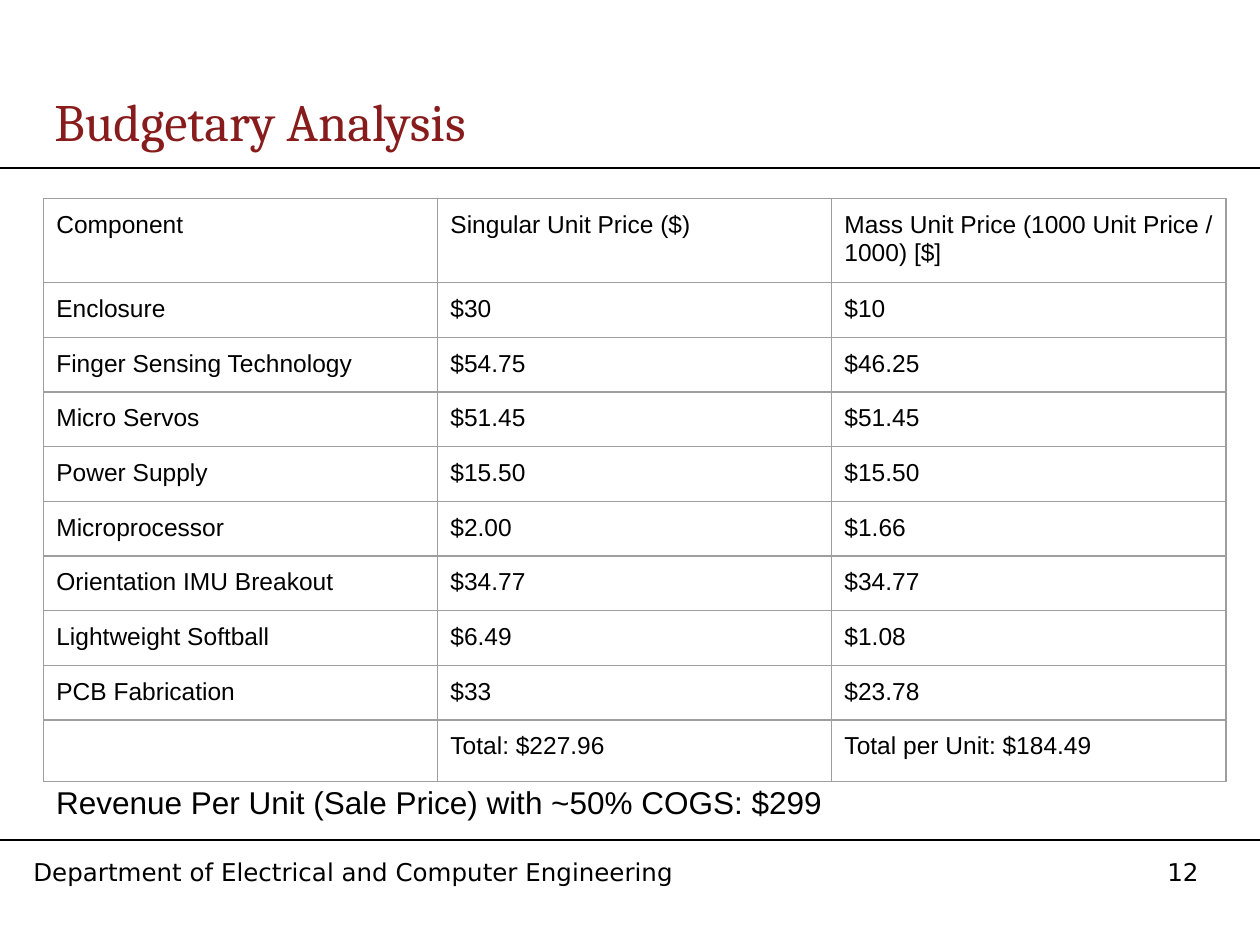
"""Build the budgetary analysis slide with its price table."""
from lxml import etree
from pptx import Presentation
from pptx.dml.color import RGBColor
from pptx.enum import shapes, text
from pptx.oxml import ns
from pptx.util import Pt


def style(p, size, font, color="000000"):
    p.font.size = Pt(size)
    p.font.name = font
    p.font.color.rgb = RGBColor.from_string(color)


def add_text(box, content, size, font, color="000000", inset=7.2, anchor=text.MSO_ANCHOR.TOP):
    tf = s.shapes.add_textbox(*map(Pt, box)).text_frame
    tf.word_wrap = True
    tf.vertical_anchor = anchor
    tf.margin_left = tf.margin_right = Pt(7.2)
    tf.margin_top = tf.margin_bottom = Pt(inset)
    p = tf.paragraphs[0]
    p.text = content
    style(p, size, font, color)


prs = Presentation()
prs.slide_width, prs.slide_height = Pt(720), Pt(540)
s = prs.slides.add_slide(prs.slide_layouts[6])

for y in (96, 480):
    rule = s.shapes.add_connector(shapes.MSO_CONNECTOR.STRAIGHT, Pt(0), Pt(y), Pt(720), Pt(y))
    rule.line.color.rgb = RGBColor.from_string("000000")
    rule.line.width = Pt(1)
    etree.SubElement(rule._element.spPr, ns.qn("a:effectLst"))

add_text((660, 486, 48, 24), "12", 14, "DejaVu Sans", inset=3.6)
add_text((12, 486, 407, 24), "Department of Electrical and Computer Engineering", 14, "DejaVu Sans", inset=3.6)
add_text((24, 48, 696, 42), "Budgetary Analysis", 30, "Cambria", "881C1C", anchor=text.MSO_ANCHOR.MIDDLE)

rows = [
    ("Component", "Singular Unit Price ($)", "Mass Unit Price (1000 Unit Price / 1000) [$]"),
    ("Enclosure", "$30", "$10"),
    ("Finger Sensing Technology", "$54.75", "$46.25"),
    ("Micro Servos", "$51.45", "$51.45"),
    ("Power Supply", "$15.50", "$15.50"),
    ("Microprocessor", "$2.00", "$1.66"),
    ("Orientation IMU Breakout", "$34.77", "$34.77"),
    ("Lightweight Softball", "$6.49", "$1.08"),
    ("PCB Fabrication", "$33", "$23.78"),
    ("", "Total: $227.96", "Total per Unit: $184.49"),
]
heights = [47.4] + [30.9] * 8 + [34.9]
table = s.shapes.add_table(len(rows), 3, Pt(25), Pt(113.5), Pt(675.6), Pt(sum(heights))).table
table.first_row = table.horz_banding = False
for col in table.columns:
    col.width = Pt(225.2)
for row, height, values in zip(table.rows, heights, rows):
    row.height = Pt(height)
    for cell, value in zip(row.cells, values):
        cell.margin_left = cell.margin_right = cell.margin_top = cell.margin_bottom = Pt(7.2)
        p = cell.text_frame.paragraphs[0]
        p.text = value
        style(p, 14, "Arial")
        tcPr = cell._tc.get_or_add_tcPr()
        for side in ("lnL", "lnR", "lnT", "lnB"):
            ln = etree.SubElement(tcPr, ns.qn(f"a:{side}"), w=str(Pt(0.75)))
            fill = etree.SubElement(ln, ns.qn("a:solidFill"))
            etree.SubElement(fill, ns.qn("a:srgbClr"), val="9E9E9E")
        cell.fill.background()

add_text((25, 440, 564, 65), "Revenue Per Unit (Sale Price) with ~50% COGS: $299", 18, "Arial")

prs.save("out.pptx")
